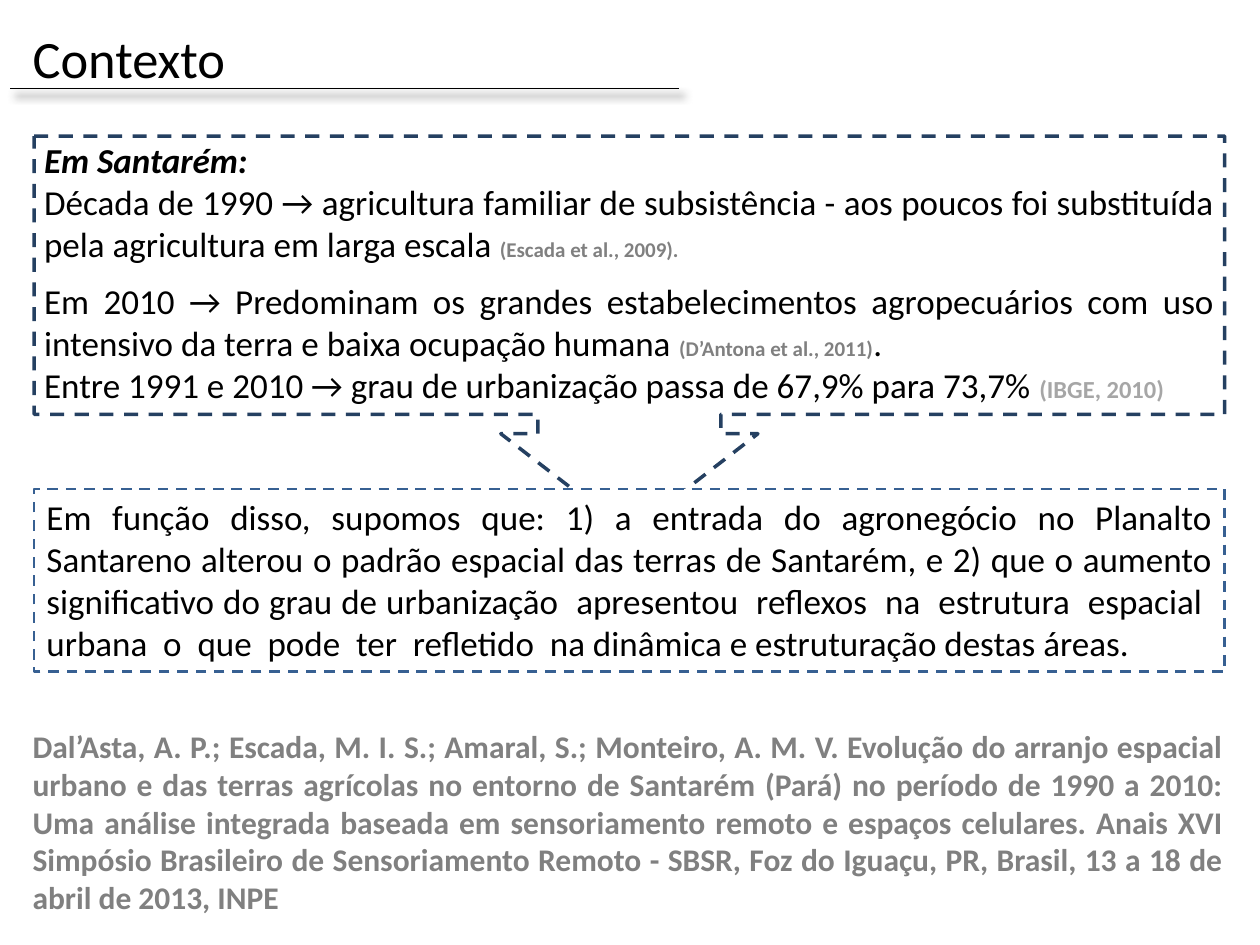
from dataclasses import dataclass
from typing import Optional

from lxml import etree
from pptx import Presentation
from pptx.dml.color import RGBColor
from pptx.enum import dml, shapes, text
from pptx.oxml.ns import qn
from pptx.util import Inches, Pt


@dataclass(frozen=True)
class Theme:
    font: str = "Calibri"
    black: str = "000000"
    gray: str = "808080"
    pale: str = "A6A6A6"
    white: str = "FFFFFF"
    navy: str = "254061"
    blue: str = "376092"
    title: int = 30
    body: int = 20
    source: int = 18
    note: int = 14
    cite: int = 12


T = Theme()


@dataclass(frozen=True)
class Run:
    words: str
    size: int = T.body
    color: str = T.black
    bold: bool = False
    italic: bool = False


@dataclass(frozen=True)
class Para:
    runs: tuple[Run, ...]
    before: float = 0
    align: text.PP_ALIGN = text.PP_ALIGN.JUSTIFY


@dataclass(frozen=True)
class Box:
    left: float
    top: float
    width: float
    height: float

    def area(self) -> tuple:
        return tuple(map(Inches, (self.left, self.top, self.width, self.height)))


def write(frame, paras: list[Para], anchor=text.MSO_ANCHOR.TOP) -> None:
    frame.word_wrap = True
    frame.vertical_anchor = anchor
    for i, item in enumerate(paras):
        para = frame.paragraphs[0] if i == 0 else frame.add_paragraph()
        para.alignment = item.align
        para.space_before = Pt(item.before)
        for part in item.runs:
            run = para.add_run()
            run.text = part.words
            font = run.font
            font.name, font.size = T.font, Pt(part.size)
            font.bold, font.italic = part.bold, part.italic
            font.color.rgb = RGBColor.from_string(part.color)


def label(slide, box: Box, paras: list[Para], side: Optional[float] = None,
          anchor=text.MSO_ANCHOR.TOP) -> None:
    frame = slide.shapes.add_textbox(*box.area()).text_frame
    if side is not None:
        frame.margin_left = frame.margin_right = Inches(side)
    write(frame, paras, anchor)


def panel(slide, kind, box: Box, color: str, width: float,
          fill: Optional[str] = None):
    shape = slide.shapes.add_shape(kind, *box.area())
    shape.shadow.inherit = False
    if fill:
        shape.fill.solid()
        shape.fill.fore_color.rgb = RGBColor.from_string(fill)
    else:
        shape.fill.background()
    shape.line.color.rgb = RGBColor.from_string(color)
    shape.line.width = Pt(width)
    shape.line.dash_style = dml.MSO_LINE.DASH
    return shape


def rule(slide, left: float, right: float, top: float) -> None:
    line = slide.shapes.add_connector(
        shapes.MSO_CONNECTOR.STRAIGHT,
        Inches(left), Inches(top), Inches(right), Inches(top))
    line.line.color.rgb = RGBColor.from_string(T.black)
    line.line.width = Pt(0.5)
    # Soft shadow falling to the lower right
    fx = etree.SubElement(line._element.spPr, qn("a:effectLst"))
    shade = etree.SubElement(fx, qn("a:outerShdw"), blurRad=str(Pt(5)),
                             dist=str(Pt(5)), dir=str(55 * 60000),
                             algn="tl", rotWithShape="0")
    tint = etree.SubElement(shade, qn("a:srgbClr"), val=T.black)
    etree.SubElement(tint, qn("a:alpha"), val="93000")


FACTS = [
    Para((Run("Em Santarém:", bold=True, italic=True),)),
    Para((Run("Década de 1990 → agricultura familiar de subsistência - aos "
              "poucos foi substituída pela agricultura em larga escala "),
          Run("(Escada et al., 2009).", T.cite, T.gray, True))),
    Para((Run("Em 2010 → Predominam os grandes estabelecimentos agropecuários "
              "com uso intensivo da terra e baixa ocupação humana "),
          Run("(D’Antona et al., 2011)", T.cite, T.gray, True),
          Run(".")), before=8.5),
    Para((Run("Entre 1991 e 2010 → grau de urbanização passa de 67,9% "
              "para 73,7% "),
          Run("(IBGE, 2010)", T.note, T.pale, True))),
]
CLAIM = Para((Run(
    "Em função disso, supomos que: 1) a entrada do agronegócio no Planalto "
    "Santareno alterou o padrão espacial das terras de Santarém, e 2) que o "
    "aumento significativo do grau de urbanização  apresentou  reflexos  na  "
    "estrutura  espacial  urbana  o  que  pode  ter  refletido  na dinâmica e "
    "estruturação destas áreas."),))
SOURCE = Para((Run(
    "Dal’Asta, A. P.; Escada, M. I. S.; Amaral, S.; Monteiro, A. M. V. "
    "Evolução do arranjo espacial urbano e das terras agrícolas no entorno de "
    "Santarém (Pará) no período de 1990 a 2010: Uma análise integrada baseada "
    "em sensoriamento remoto e espaços celulares. Anais XVI Simpósio "
    "Brasileiro de Sensoriamento Remoto - SBSR, Foz do Iguaçu, PR, Brasil, "
    "13 a 18 de abril de 2013, INPE", T.source, T.gray, True),))


def main() -> None:
    deck = Presentation()
    deck.slide_width, deck.slide_height = Inches(10), Inches(7.5)
    slide = deck.slides.add_slide(deck.slide_layouts[6])

    # Title and rule
    title = Para((Run("Contexto", T.title),), align=text.PP_ALIGN.LEFT)
    label(slide, Box(0.16, 0.16, 5.08, 0.61), [title])
    rule(slide, 0.08, 5.39, 0.7)

    # Facts inside the arrow callout
    label(slide, Box(0.35, 1.04, 9.29, 2.24), FACTS, 0, text.MSO_ANCHOR.MIDDLE)
    arrow = panel(slide, shapes.MSO_SHAPE.DOWN_ARROW_CALLOUT,
                  Box(0.27, 1.08, 9.45, 3.15), T.navy, 2)
    for i, value in enumerate((0.461, 0.324, 0.25, 0.701)):
        arrow.adjustments[i] = value

    # Hypothesis, covering the arrow tip
    claim = panel(slide, shapes.MSO_SHAPE.RECTANGLE,
                  Box(0.27, 3.88, 9.45, 1.45), T.blue, 1.5, T.white)
    write(claim.text_frame, [CLAIM])

    # Reference
    label(slide, Box(0.16, 5.72, 9.65, 1.62), [SOURCE])
    deck.save("out.pptx")


if __name__ == "__main__":
    main()
